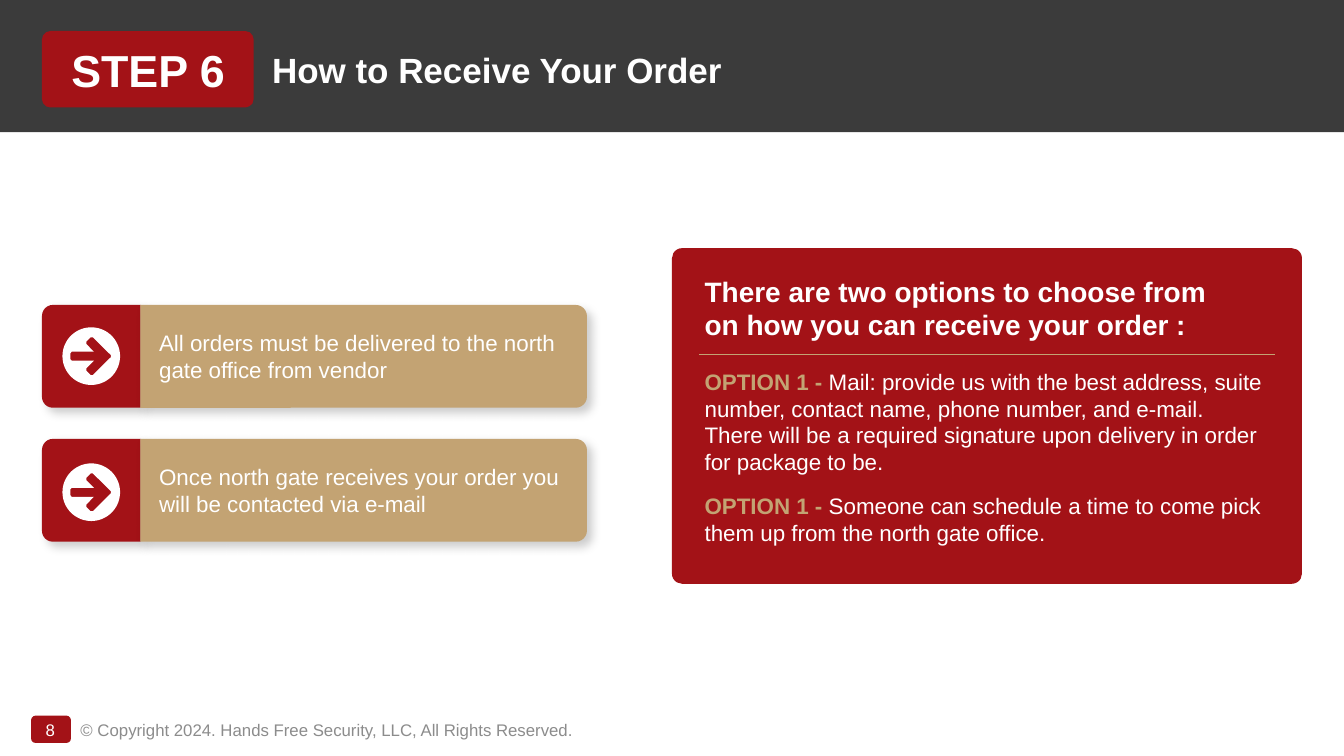
from dataclasses import dataclass
from math import cos, pi, sin

from lxml.etree import SubElement
from pptx import Presentation
from pptx.dml.color import RGBColor
from pptx.enum.shapes import MSO_CONNECTOR, MSO_SHAPE
from pptx.enum.text import MSO_ANCHOR, MSO_AUTO_SIZE, PP_ALIGN
from pptx.oxml.ns import qn
from pptx.shapes.autoshape import Shape
from pptx.slide import Slide
from pptx.text.text import TextFrame
from pptx.util import Inches, Length, Pt

COLUMNS, ROWS = 160, 90
CELL = Inches(7.5) / ROWS

WHITE = RGBColor(0xFF, 0xFF, 0xFF)
CHARCOAL = RGBColor(0x3B, 0x3B, 0x3B)
RED = RGBColor(0xA3, 0x12, 0x17)
TAN = RGBColor(0xC3, 0xA3, 0x73)
GRAY = RGBColor(0x8C, 0x8C, 0x8C)

ARROW = [
    (56.8, 36.3), (56.8, 38.5), (39, 56.2), (36.8, 56.2), (32.5, 52), (32.5, 49.6),
    (40, 42), (18, 42), (16.7, 40.5), (16.7, 34.5), (18, 33), (40, 33),
    (32.5, 25.4), (32.5, 23), (36.8, 18.8), (39, 18.8),
]
ARROW_CENTER = 37.4
ARROW_UNIT = 0.12
ICON_RADIUS = 3.43
ICON_CENTER_COLUMN = 10.87


@dataclass(frozen=True)
class Area:
    left: float
    top: float
    width: float
    height: float

    def lengths(self) -> tuple[Length, ...]:
        return tuple(grid(n) for n in (self.left, self.top, self.width, self.height))


@dataclass(frozen=True)
class Style:
    size: float
    color: RGBColor = WHITE
    bold: bool = False
    align: PP_ALIGN = PP_ALIGN.LEFT
    anchor: MSO_ANCHOR = MSO_ANCHOR.TOP


@dataclass(frozen=True)
class Card:
    text: str
    top: float
    icon_center: float


@dataclass(frozen=True)
class Option:
    label: str
    text: str
    space_before: float = 0


CARDS = [
    Card("All orders must be delivered to the north gate office from vendor", 36.3, 42.4),
    Card("Once north gate receives your order you will be contacted via e-mail", 52.25, 58.6),
]
OPTIONS = [
    Option("OPTION 1 - ", "Mail: provide us with the best address, suite number, "
           "contact name, phone number, and e-mail."),
    Option("", "There will be a required signature upon delivery in order for package to be."),
    Option("OPTION 1 - ", "Someone can schedule a time to come pick them up "
           "from the north gate office.", 12),
]


def grid(cells: float) -> Length:
    return Length(round(cells * CELL))


def style_frame(frame: TextFrame, style: Style) -> None:
    frame.word_wrap = True
    frame.auto_size = MSO_AUTO_SIZE.NONE
    frame.vertical_anchor = style.anchor
    for para in frame.paragraphs:
        para.alignment = style.align
        for span in para.runs:
            span.font.name = "Arial"
            span.font.size = Pt(style.size)
            span.font.bold = style.bold
            span.font.color.rgb = style.color


def add_text(page: Slide, area: Area, text: str, style: Style) -> None:
    box = page.shapes.add_textbox(*area.lengths())
    box.text_frame.text = text
    style_frame(box.text_frame, style)


def paint(shape: Shape, color: RGBColor) -> None:
    shape.shadow.inherit = False
    shape.fill.solid()
    shape.fill.fore_color.rgb = color
    shape.line.fill.background()


def add_block(page: Slide, kind: MSO_SHAPE, area: Area, color: RGBColor,
              *corners: float) -> Shape:
    shape = page.shapes.add_shape(kind, *area.lengths())
    for index, corner in enumerate(corners):
        shape.adjustments[index] = corner
    paint(shape, color)
    return shape


def add_card_end(page: Slide, area: Area, color: RGBColor, rotation: int) -> None:
    upright = Area(area.left + (area.width - area.height) / 2,
                   area.top + (area.height - area.width) / 2, area.height, area.width)
    shape = add_block(page, MSO_SHAPE.ROUND_2_SAME_RECTANGLE, upright, color, 0.11, 0)
    shape.rotation = rotation
    effects = shape._element.spPr.find(qn("a:effectLst"))
    shadow = SubElement(effects, qn("a:outerShdw"), blurRad=str(Pt(7)), dist=str(Pt(5)),
                        dir=str(45 * 60000), algn="tl", rotWithShape="0")
    tint = SubElement(shadow, qn("a:srgbClr"), val="000000")
    SubElement(tint, qn("a:alpha"), val="20000")


def add_arrow_icon(page: Slide, center: float) -> None:
    steps = 72
    circle = [(grid(ICON_CENTER_COLUMN + ICON_RADIUS * cos(2 * pi * n / steps)),
               grid(center + ICON_RADIUS * sin(2 * pi * n / steps))) for n in range(steps)]
    arrow = [(grid(ICON_CENTER_COLUMN + (x - ARROW_CENTER) * ARROW_UNIT),
              grid(center + (y - ARROW_CENTER) * ARROW_UNIT)) for x, y in ARROW]
    builder = page.shapes.build_freeform(*circle[0])
    builder.add_line_segments(circle[1:])
    builder.move_to(*arrow[0])
    builder.add_line_segments(arrow[1:])
    paint(builder.convert_to_shape(), WHITE)


def add_card(page: Slide, card: Card) -> None:
    add_card_end(page, Area(5, card.top, 11.75, 12.24), RED, 270)
    add_card_end(page, Area(16.72, card.top, 53.16, 12.24), TAN, 90)
    add_text(page, Area(17.76, card.top + 2.3, 50, 7.7), card.text, Style(16))
    add_arrow_icon(page, card.icon_center)


def add_header(page: Slide) -> None:
    add_block(page, MSO_SHAPE.RECTANGLE, Area(0, 0, COLUMNS, 15.75), CHARCOAL)
    add_block(page, MSO_SHAPE.ROUNDED_RECTANGLE, Area(5, 3.7, 25.2, 9.1), RED, 0.11)
    title = page.shapes.title
    title.left, title.top, title.width, title.height = Area(31.2, 2.65, 128.8, 11.3).lengths()
    title.text_frame.text = "How to Receive Your Order"
    style_frame(title.text_frame, Style(25, bold=True, anchor=MSO_ANCHOR.MIDDLE))
    page.shapes._spTree.append(title._element)
    add_text(page, Area(5.64, 4.44, 24, 7.7), "STEP 6",
             Style(32, bold=True, align=PP_ALIGN.CENTER))


def add_footer(page: Slide) -> None:
    add_block(page, MSO_SHAPE.ROUNDED_RECTANGLE, Area(3.7, 85.2, 4.75, 3.25), RED)
    add_text(page, Area(3.36, 85.1, 5.28, 3.6), "8",
             Style(12, align=PP_ALIGN.CENTER, anchor=MSO_ANCHOR.MIDDLE))
    add_text(page, Area(8.4, 85.1, 65.6, 3.6),
             "© Copyright 2024. Hands Free Security, LLC, All Rights Reserved.",
             Style(12, GRAY, anchor=MSO_ANCHOR.MIDDLE))


def add_options_panel(page: Slide) -> None:
    add_block(page, MSO_SHAPE.ROUNDED_RECTANGLE, Area(80, 29.55, 75, 39.95), RED, 0.03)
    add_text(page, Area(82.7, 32.05, 66.2, 9.2),
             "There are two options to choose from on how you can receive your order :",
             Style(20, bold=True))
    rule = page.shapes.add_connector(MSO_CONNECTOR.STRAIGHT, grid(83.25), grid(42.2),
                                     grid(151.8), grid(42.2))
    rule.line.color.rgb = TAN
    rule.line.width = Pt(0.5)
    SubElement(rule._element.spPr, qn("a:effectLst"))
    box = page.shapes.add_textbox(*Area(82.7, 43.2, 69, 22.6).lengths())
    frame = box.text_frame
    frame.text = "\n".join(option.label for option in OPTIONS)
    for para, option in zip(frame.paragraphs, OPTIONS):
        para.add_run().text = option.text
        if option.space_before:
            para.space_before = Pt(option.space_before)
    style_frame(frame, Style(16))
    for para, option in zip(frame.paragraphs, OPTIONS):
        if option.label:
            para.runs[0].font.bold = True
            para.runs[0].font.color.rgb = TAN


def main() -> None:
    deck = Presentation()
    deck.slide_width, deck.slide_height = grid(COLUMNS), grid(ROWS)
    page = deck.slides.add_slide(deck.slide_layouts[5])
    add_header(page)
    add_footer(page)
    add_options_panel(page)
    for card in CARDS:
        add_card(page, card)
    deck.save("out.pptx")


if __name__ == "__main__":
    main()
